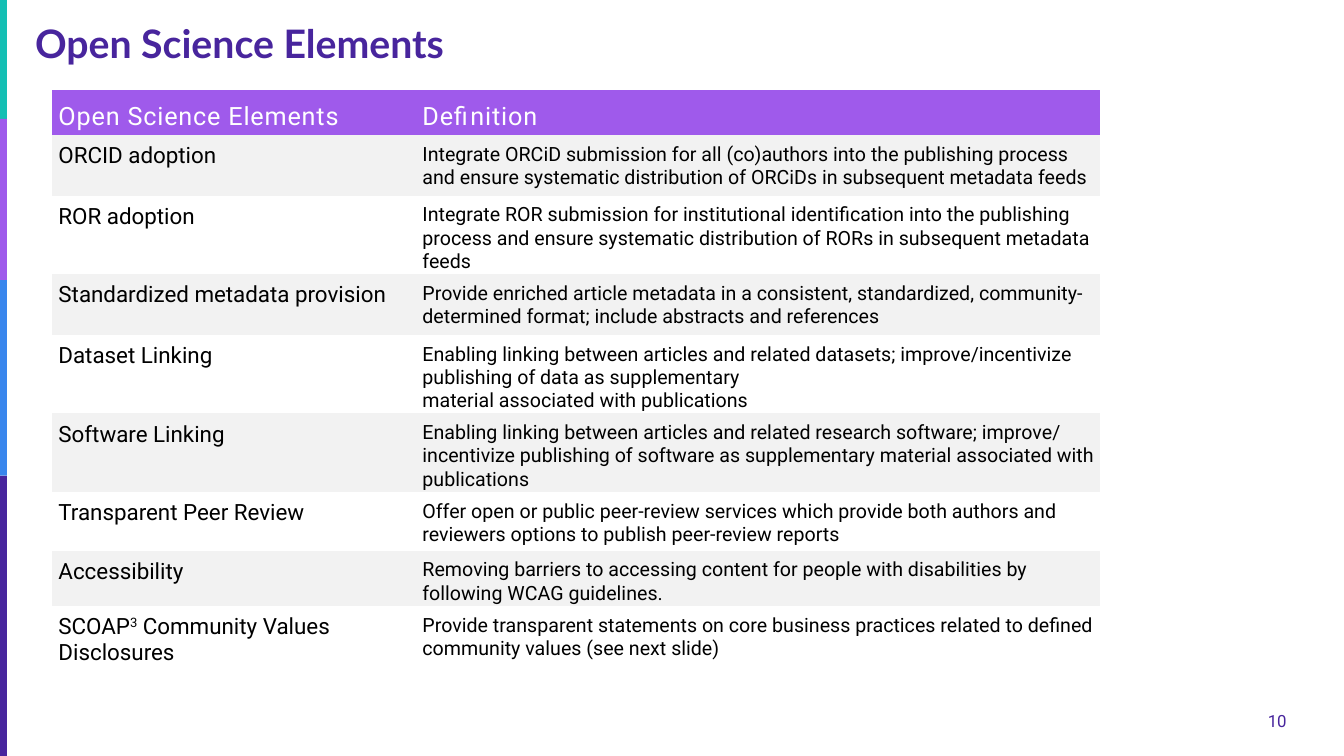
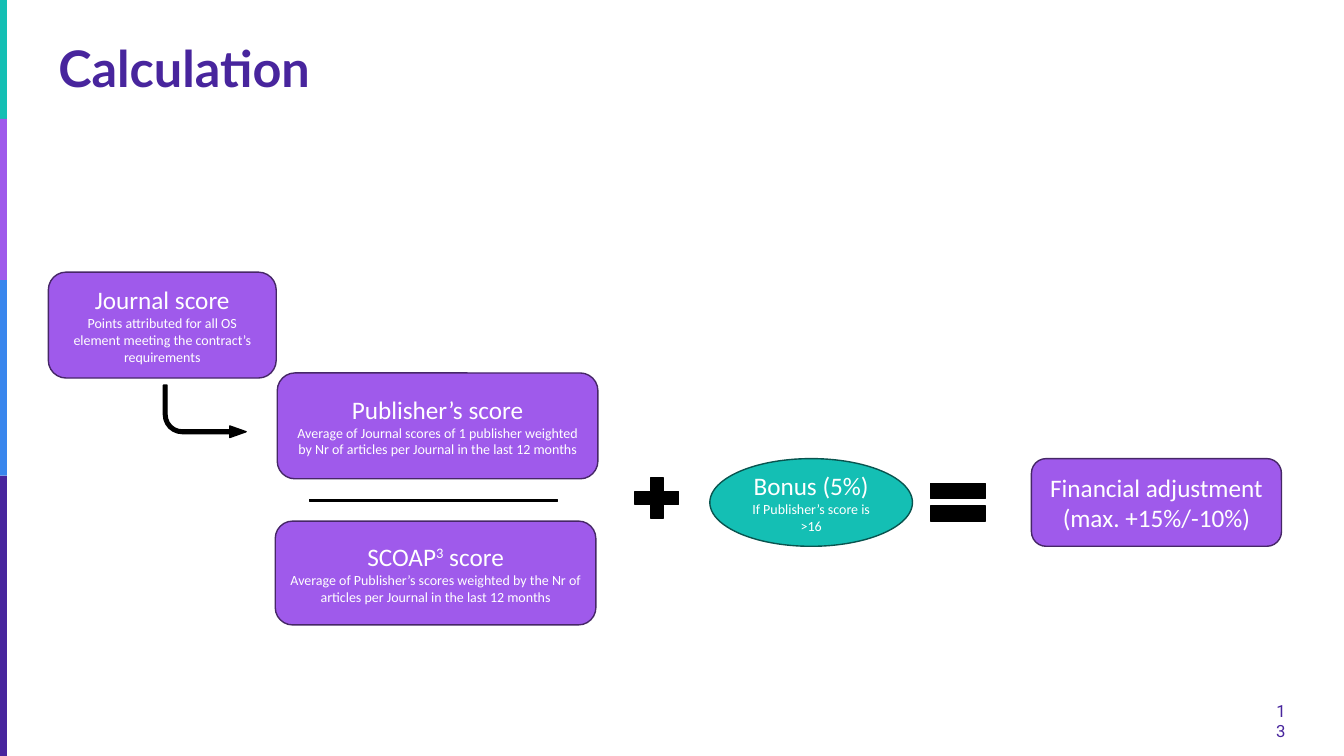
from pptx import Presentation
from pptx.dml.color import RGBColor
from pptx.enum.shapes import MSO_SHAPE
from pptx.enum.text import MSO_ANCHOR, PP_ALIGN
from pptx.util import Inches, Pt

ROUND, ELLIPSE = MSO_SHAPE.ROUNDED_RECTANGLE, MSO_SHAPE.OVAL
PLUS, MINUS, EQUAL = MSO_SHAPE.MATH_PLUS, MSO_SHAPE.MATH_MINUS, MSO_SHAPE.MATH_EQUAL
RECT, BENT_ARROW = MSO_SHAPE.RECTANGLE, MSO_SHAPE.BENT_ARROW
MIDDLE, TOP = MSO_ANCHOR.MIDDLE, MSO_ANCHOR.TOP
LEFT, CENTER, RIGHT = PP_ALIGN.LEFT, PP_ALIGN.CENTER, PP_ALIGN.RIGHT

INDIGO = RGBColor(0x48, 0x25, 0x9D)
PURPLE = RGBColor(0x9F, 0x5A, 0xEB)
PURPLE_EDGE = RGBColor(0x46, 0x27, 0x67)
TEAL = RGBColor(0x14, 0xBF, 0xB4)
TEAL_EDGE = RGBColor(0x09, 0x54, 0x4F)
BLUE = RGBColor(0x39, 0x86, 0xED)
GREY = RGBColor(0xF2, 0xF2, 0xF2)
WHITE = RGBColor(0xFF, 0xFF, 0xFF)
BLACK = RGBColor(0, 0, 0)
TITLE_FONT, BODY_FONT, BOX_FONT = "Lato", "Roboto", "Calibri"
NO_STYLE = "{2D5ABB26-0587-4C30-8999-92F81FD0307C}"

# Text between ^ marks is superscript; \v is a line break.
BAND_WIDTH = 0.07
BANDS = [(TEAL, 1.18), (PURPLE, 1.6), (BLUE, 1.94), (INDIGO, 2.78)]

TABLE_AT = (0.52, 0.89)
COLUMNS = (3.61, 6.78)
HEADER = ("Open Science Elements", "Definition")
HEADER_HEIGHT = 0.45
ELEMENTS = [
    (0.6, "ORCID adoption",
     "Integrate ORCiD submission for all (co)authors into the publishing process "
     "and ensure systematic distribution of ORCiDs in subsequent metadata feeds"),
    (0.6, "ROR adoption",
     "Integrate ROR submission for institutional identification into the publishing "
     "process and ensure systematic distribution of RORs in subsequent metadata feeds"),
    (0.6, "Standardized metadata provision",
     "Provide enriched article metadata in a consistent, standardized, "
     "community-determined format; include abstracts and references"),
    (0.66, "Dataset Linking",
     "Enabling linking between articles and related datasets; improve/incentivize "
     "publishing of data as supplementary\vmaterial associated with publications"),
    (0.59, "Software Linking",
     "Enabling linking between articles and related research software; improve/ "
     "incentivize publishing of software as supplementary material associated with "
     "publications"),
    (0.58, "Transparent Peer Review",
     "Offer open or public peer-review services which provide both authors and "
     "reviewers options to publish peer-review reports"),
    (0.4, "Accessibility",
     "Removing barriers to accessing content for people with disabilities by "
     "following WCAG guidelines."),
    (0.56, "SCOAP^3^ Community Values Disclosures",
     "Provide transparent statements on core business practices related to defined "
     "community values (see next slide)"),
]

BOXES = [
    (ROUND, (10.23, 4.55, 2.48, 0.87), PURPLE, PURPLE_EDGE,
     ["Financial adjustment (max. +15%/-10%)"]),
    (ROUND, (2.75, 3.7, 3.18, 1.05), PURPLE, PURPLE_EDGE,
     ["Publisher’s score",
      "Average of Journal scores of 1 publisher weighted by Nr of articles per "
      "Journal in the last 12 months"]),
    (ELLIPSE, (7.04, 4.55, 2.01, 0.87), TEAL, TEAL_EDGE,
     ["Bonus (5%)", "If Publisher’s score is >16"]),
    (ROUND, (2.73, 5.17, 3.18, 1.03), PURPLE, PURPLE_EDGE,
     ["SCOAP^3^ score",
      "Average of Publisher’s scores weighted by the Nr of articles per Journal in "
      "the last 12 months"]),
    (ROUND, (0.48, 2.7, 2.26, 1.05), PURPLE, PURPLE_EDGE,
     ["Journal score",
      "Points attributed for all OS element meeting the contract’s requirements"]),
]
OPERATORS = [
    (EQUAL, (9.13, 4.67, 0.74, 0.63)),
    (MINUS, (2.63, 4.92, 3.34, 0.09)),
    (PLUS, (6.22, 4.67, 0.59, 0.54)),
]
ARROW_AT = (1.62, 3.82, 0.82, 0.52)
ARROW_SHAPE = (0.07, 0.11, 0.31, 0.36)


def write(p, text, font, size, color, bold=False, align=LEFT):
    for i, part in enumerate(text.split("^")):
        r = p.add_run() if "\v" not in part else None
        if r is None:
            first, second = part.split("\v")
            p.add_run().text = first
            p.add_line_break()
            r, part = p.add_run(), second
        r.text = part
        if i % 2:
            r.font._element.set("baseline", "30000")
    p.alignment = align
    p.font.name, p.font.size, p.font.bold = font, Pt(size), bold
    p.font.color.rgb = color


def add_text(s, at, text, font, size, bold=False, align=LEFT, anchor=TOP):
    tf = s.shapes.add_textbox(*map(Inches, at)).text_frame
    tf.word_wrap, tf.vertical_anchor = True, anchor
    write(tf.paragraphs[0], text, font, size, INDIGO, bold, align)
    return tf.paragraphs[0]


def add_shape(s, kind, at, fill, edge=None):
    sp = s.shapes.add_shape(kind, *map(Inches, at))
    sp.shadow.inherit = False
    sp.fill.solid()
    sp.fill.fore_color.rgb = fill
    if edge is None:
        sp.line.fill.background()
    else:
        sp.line.color.rgb = edge
        sp.line.width = Pt(1)
    return sp


def add_slide(prs, title, title_at, title_size, number, number_at, title_anchor=TOP):
    """Add a slide with the side bands, title and page number."""
    s = prs.slides.add_slide(prs.slide_layouts[6])
    top = 0
    for color, height in BANDS:
        add_shape(s, RECT, (0, top, BAND_WIDTH, height), color)
        top += height
    add_text(s, title_at, title, TITLE_FONT, title_size, True, anchor=title_anchor)
    add_text(s, number_at, number, BODY_FONT, 12, align=RIGHT, anchor=MIDDLE)
    return s


def fill_cell(cell, text, size, color, fill, anchor=TOP):
    cell.margin_left, cell.margin_top = Inches(0.06), Inches(0.08)
    cell.margin_right = cell.margin_bottom = 0
    cell.vertical_anchor = anchor
    cell.fill.solid()
    cell.fill.fore_color.rgb = fill
    write(cell.text_frame.paragraphs[0], text, BODY_FONT, size, color)


def add_elements_table(s):
    heights = [HEADER_HEIGHT] + [row[0] for row in ELEMENTS]
    frame = s.shapes.add_table(len(heights), len(COLUMNS), *map(
        Inches, (*TABLE_AT, sum(COLUMNS), sum(heights))))
    table = frame.table
    table._tbl.tblPr[0].text = NO_STYLE
    for column, width in zip(table.columns, COLUMNS):
        column.width = Inches(width)
    for row, height in zip(table.rows, heights):
        row.height = Inches(height)
    for c, text in enumerate(HEADER):
        cell = table.cell(0, c)
        fill_cell(cell, text, 18, WHITE, PURPLE, MIDDLE)
        cell.text_frame.paragraphs[0].runs[0].font._element.set("spc", "60")
    for i, (_, name, definition) in enumerate(ELEMENTS, 1):
        fill = GREY if i % 2 else WHITE
        fill_cell(table.cell(i, 0), name, 16, BLACK, fill)
        fill_cell(table.cell(i, 1), definition, 14, BLACK, fill)


def add_calculation(s):
    for kind, at, fill, edge, texts in BOXES:
        tf = add_shape(s, kind, at, fill, edge).text_frame
        tf.word_wrap, tf.vertical_anchor = True, MIDDLE
        for i, text in enumerate(texts):
            p = tf.add_paragraph() if i else tf.paragraphs[0]
            write(p, text, BOX_FONT, 10 if i else 18, WHITE, align=CENTER)
    for kind, at in OPERATORS:
        add_shape(s, kind, at, BLACK, BLACK)
    arrow = add_shape(s, BENT_ARROW, ARROW_AT, BLACK, BLACK)
    for i, value in enumerate(ARROW_SHAPE):
        arrow.adjustments[i] = value
    arrow.rotation = 180
    arrow._element.spPr.xfrm.set("flipH", "1")


def main():
    prs = Presentation()
    prs.slide_width, prs.slide_height = Inches(13.33), Inches(7.5)
    s = add_slide(prs, "Open Science Elements", (0.25, 0.14, 6.69, 0.57), 28,
                  "10", (9.42, 6.95, 3.44, 0.4))
    add_elements_table(s)
    s = add_slide(prs, "Calculation", (0.48, 0.15, 12.29, 1.03), 36,
                  "13", (12.51, 6.95, 0.34, 0.4), MIDDLE)
    add_calculation(s)
    prs.save("out.pptx")


if __name__ == "__main__":
    main()
